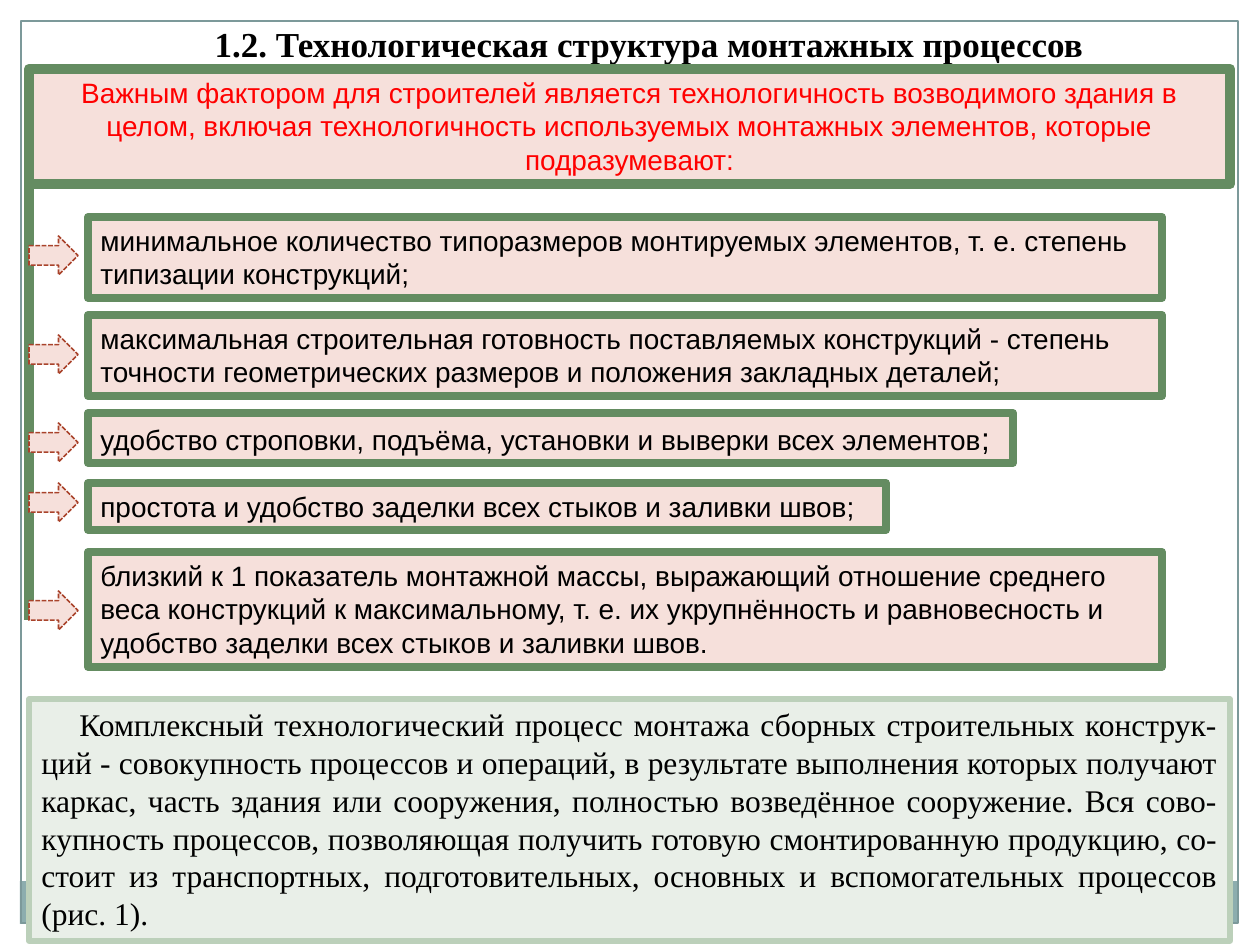
from lxml.etree import SubElement
from pptx import Presentation
from pptx.dml.color import RGBColor
from pptx.enum.dml import MSO_LINE
from pptx.enum.shapes import MSO_CONNECTOR, MSO_SHAPE
from pptx.enum.text import MSO_ANCHOR, MSO_AUTO_SIZE, PP_ALIGN
from pptx.oxml.ns import qn
from pptx.util import Emu, Pt

COLOURS = {
    "black": "000000",
    "red": "FF0000",
    "pink": "F6E0DB",
    "green": "648C61",
    "pale_green": "E9EFE8",
    "soft_green": "BCD0BA",
    "brick": "A9432B",
    "bar": "8CADAE",
    "border": "7C999A",
}
SERIF = "Times New Roman"
SANS = "Arial"
EMU_PER_PX = 914400 / 126
FIRST_LINE_INDENT = 38

TITLE = "1.2. Технологическая структура монтажных процессов"
LEAD = (
    "Важным фактором для строителей является технологичность возводимого здания в целом, "
    "включая технологичность используемых монтажных элементов, которые подразумевают:"
)
SUMMARY = (
    "Комплексный технологический процесс монтажа сборных строительных конструк-ций - "
    "совокупность процессов и операций, в результате выполнения которых получают каркас, "
    "часть здания или сооружения, полностью возведённое сооружение. Вся сово-купность "
    "процессов, позволяющая получить готовую смонтированную продукцию, со-стоит из "
    "транспортных, подготовительных, основных и вспомогательных процессов (рис. 1)."
)
FACTORS = [
    (217, 1074, 81, 236, [
        ("минимальное количество типоразмеров монтируемых элементов, т. е. степень "
         "типизации конструкций;", 16),
    ]),
    (315, 1074, 81, 335, [
        ("максимальная строительная готовность поставляемых конструкций - степень "
         "точности геометрических размеров и положения закладных деталей;", 16),
    ]),
    (413, 925, 50, 423, [
        ("удобство строповки, подъёма, установки и выверки всех элементов", 16),
        (";", 18),
    ]),
    (483, 798, 47, 483, [
        ("простота и удобство заделки всех стыков и заливки швов;", 16),
    ]),
    (552, 1074, 115, 591, [
        ("близкий к 1 показатель монтажной массы, выражающий отношение среднего веса "
         "конструкций к максимальному, т. е. их укрупнённость и равновесность и удобство "
         "заделки всех стыков и заливки швов.", 16),
    ]),
]


def px(value):
    return Emu(round(value * EMU_PER_PX))


def colour(name):
    return RGBColor.from_string(COLOURS[name])


def apply(target, values):
    for name, value in values.items():
        setattr(target, name, value)


class SlideBuilder:
    def __init__(self, presentation):
        self.slide = presentation.slides.add_slide(presentation.slide_layouts[5])

    def place(self, shape, box):
        apply(shape, dict(zip(("left", "top", "width", "height"), map(px, box))))

    def add_text(self, shape, runs, font=SANS, ink="black", bold=False,
                 align=PP_ALIGN.LEFT, anchor=MSO_ANCHOR.TOP, indent=0):
        frame = shape.text_frame
        apply(frame, {
            "word_wrap": True,
            "auto_size": MSO_AUTO_SIZE.SHAPE_TO_FIT_TEXT,
            "vertical_anchor": anchor,
        })
        paragraph = frame.paragraphs[0]
        paragraph.alignment = align
        if indent:
            paragraph._p.get_or_add_pPr().set("indent", str(px(indent)))
        for text, size in runs:
            run = paragraph.add_run()
            run.text = text
            apply(run.font, {"name": font, "size": Pt(size), "bold": bold})
            run.font.color.rgb = colour(ink)

    def title(self, box, text, size):
        title = self.slide.shapes.title
        self.place(title, box)
        self.add_text(title, [(text, size)], font=SERIF, bold=True, align=PP_ALIGN.CENTER,
                      anchor=MSO_ANCHOR.MIDDLE, indent=FIRST_LINE_INDENT)

    def shape(self, box, fill=None, line=None, width=1, dash=None, kind=MSO_SHAPE.RECTANGLE):
        shape = self.slide.shapes.add_shape(kind, *map(px, box))
        shape.shadow.inherit = False
        if fill:
            shape.fill.solid()
            shape.fill.fore_color.rgb = colour(fill)
        else:
            shape.fill.background()
        if line:
            shape.line.color.rgb = colour(line)
            apply(shape.line, {"width": Pt(width), "dash_style": dash})
        else:
            shape.line.fill.background()
        return shape

    def panel(self, box, runs, fill="pink", line="green", width=4.5, **text_format):
        self.add_text(self.shape(box, fill, line, width), runs, **text_format)

    def arrow(self, box):
        self.shape(box, "pink", "brick", 0.9, MSO_LINE.SQUARE_DOT, MSO_SHAPE.RIGHT_ARROW)

    def line(self, start, end, ink, width):
        connector = self.slide.shapes.add_connector(
            MSO_CONNECTOR.STRAIGHT, *map(px, (*start, *end)))
        connector.line.color.rgb = colour(ink)
        connector.line.width = Pt(width)
        SubElement(connector._element.spPr, qn("a:effectLst"))


def main():
    presentation = Presentation()
    apply(presentation, {"slide_width": px(1260), "slide_height": px(945)})
    builder = SlideBuilder(presentation)

    builder.shape((20, 881, 1218, 43), fill="bar")
    builder.shape((21, 21, 1217, 902), line="border", width=0.75)
    builder.title((0, 16, 1260, 55), TITLE, 20)
    builder.panel((29, 69, 1201, 115), [(LEAD, 16)], width=6, ink="red",
                  align=PP_ALIGN.CENTER)
    for top, width, height, _, runs in FACTORS:
        builder.panel((88, top, width, height), runs)
    builder.line((29, 178), (29, 620), "green", 6)
    builder.panel((29, 699, 1201, 242), [(SUMMARY, 18)], "pale_green", "soft_green", 3,
                  font=SERIF, align=PP_ALIGN.JUSTIFY, indent=FIRST_LINE_INDENT)
    for _, _, _, arrow_top, _ in FACTORS:
        builder.arrow((29, arrow_top, 49, 39))

    presentation.save("out.pptx")


if __name__ == "__main__":
    main()
